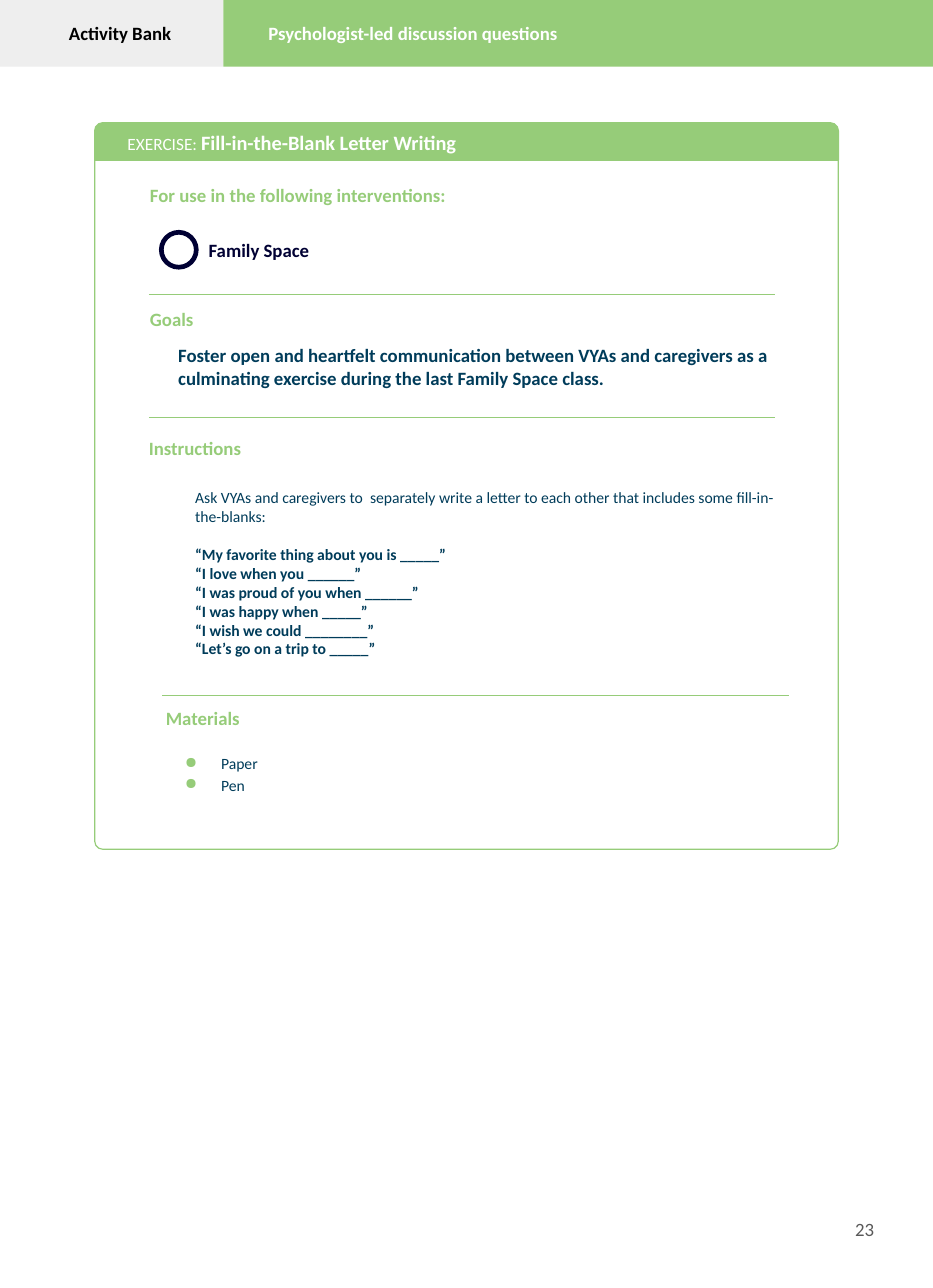
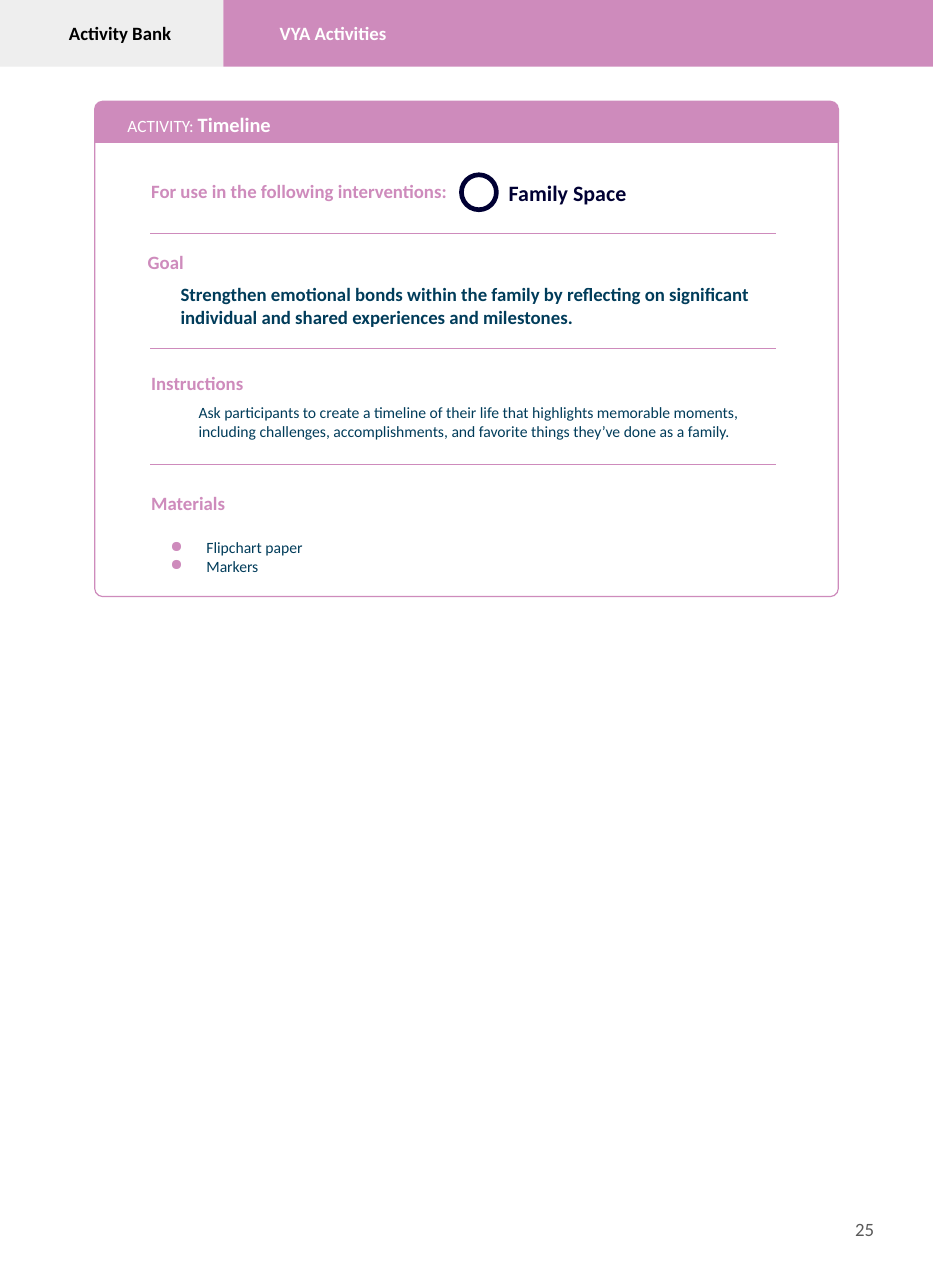
"""Builds two activity bank pages, each with one framed exercise card."""
from dataclasses import dataclass

import lxml.etree
import pptx
import pptx.dml.color
import pptx.enum.shapes
import pptx.enum.text
import pptx.oxml.ns
import pptx.util

Inches = pptx.util.Inches
Pt = pptx.util.Pt
Color = pptx.dml.color.RGBColor
Shape = pptx.enum.shapes.MSO_SHAPE
Align = pptx.enum.text.PP_ALIGN
Anchor = pptx.enum.text.MSO_ANCHOR
qn = pptx.oxml.ns.qn


@dataclass(frozen=True)
class Theme:
    """Font, colours and type sizes of the deck."""
    font: str = "Calibri"
    white: str = "FFFFFF"
    black: str = "000000"
    tab: str = "EEEEEE"
    ink: str = "003C5A"
    navy: str = "000033"
    footer: str = "595959"
    green: str = "96CC79"
    pink: str = "CE8BBC"
    title: float = 13
    kind: float = 11
    heading: float = 12
    body: float = 10


@dataclass(frozen=True)
class Place:
    """A rectangle in inches."""
    left: float
    top: float
    width: float
    height: float


@dataclass(frozen=True)
class Passage:
    """Body text of a section; quotes follow in bold after a gap."""
    left: float
    top: float
    lines: tuple[str, ...]
    quotes: tuple[str, ...] = ()
    strong: bool = False
    bulleted: bool = False
    spacing: float = 1.0


@dataclass(frozen=True)
class Section:
    """A heading with an optional passage below it."""
    heading: str
    left: float
    top: float
    passage: Passage | None = None


@dataclass(frozen=True)
class Activity:
    """Everything that differs from one page to the next."""
    accent: str
    topic: str
    topic_left: float
    kind: str
    name: str
    title_top: float
    band: Place
    card_bottom: float
    ring_left: float
    ring_top: float
    program_size: float
    sections: tuple[Section, ...]
    rules: tuple[tuple[float, float], ...]
    number: str


THEME = Theme()
PAGE_WIDTH, PAGE_HEIGHT = 8.27, 11.42
HEADER_HEIGHT = 0.59
TAB_WIDTH = 1.98
CARD_LEFT, CARD_WIDTH = 0.84, 6.59
CORNER = 0.07
RING = 0.31
RULE_WIDTH = 5.55
PASSAGE_RIGHT = 6.88
USE = "For use in the following interventions:"

ACTIVITIES = (
    Activity(
        accent=THEME.green, topic="Psychologist-led discussion questions", topic_left=2.38,
        kind="EXERCISE: ", name="Fill-in-the-Blank Letter Writing", title_top=1.05,
        band=Place(CARD_LEFT, 1.09, CARD_WIDTH, 0.33), card_bottom=7.53,
        ring_left=1.43, ring_top=2.06, program_size=12,
        sections=(
            Section(USE, 1.33, 1.62),
            Section("Goals", 1.33, 2.72, Passage(1.58, 3.04, (
                "Foster open and heartfelt communication between VYAs and caregivers as a "
                "culminating exercise during the last Family Space class.",), strong=True)),
            Section("Instructions", 1.32, 3.86, Passage(1.73, 4.32, (
                "Ask VYAs and caregivers to  separately write a letter to each other that "
                "includes some fill-in-the-blanks:",), quotes=(
                "“My favorite thing about you is _____”",
                "“I love when you ______”",
                "“I was proud of you when ______”",
                "“I was happy when _____”",
                "“I wish we could ________”",
                "“Let’s go on a trip to _____”"))),
            Section("Materials", 1.47, 6.26, Passage(
                1.46, 6.65, ("Paper", "Pen"), bulleted=True, spacing=1.15)),
        ),
        rules=((1.32, 2.61), (1.32, 3.7), (1.44, 6.17)), number="23"),
    Activity(
        accent=THEME.pink, topic="VYA Activities", topic_left=2.48,
        kind="ACTIVITY: ", name="Timeline", title_top=0.89,
        band=Place(CARD_LEFT, 0.9, CARD_WIDTH, 0.36), card_bottom=5.29,
        ring_left=4.09, ring_top=1.55, program_size=14,
        sections=(
            Section(USE, 1.34, 1.58),
            Section("Goal", 1.31, 2.21, Passage(1.6, 2.5, (
                "Strengthen emotional bonds within the family by reflecting on significant "
                "individual and shared experiences and milestones.",), strong=True)),
            Section("Instructions", 1.34, 3.29, Passage(1.76, 3.56, (
                "Ask participants to create a timeline of their life that highlights memorable "
                "moments, including challenges, accomplishments, and favorite things they’ve "
                "done as a family.",))),
            Section("Materials", 1.34, 4.35, Passage(
                1.33, 4.76, ("Flipchart paper", "Markers"), bulleted=True)),
        ),
        rules=((1.33, 2.07), (1.33, 3.09), (1.33, 4.12)), number="25"),
)


def set_place(box, place: Place) -> None:
    """Move and size a shape."""
    box.left, box.top = Inches(place.left), Inches(place.top)
    box.width, box.height = Inches(place.width), Inches(place.height)


def prepare_frame(box, anchor):
    """Give a shape a wrapping text frame with tight margins."""
    frame = box.text_frame
    frame.auto_size = pptx.enum.text.MSO_AUTO_SIZE.NONE
    frame.word_wrap = True
    frame.vertical_anchor = anchor
    frame.margin_left = frame.margin_right = frame.margin_bottom = 0
    frame.margin_top = Inches(0.01)
    return frame


def add_frame(page, place: Place, anchor=Anchor.TOP):
    """Add a text box and return its frame."""
    box = page.shapes.add_textbox(0, 0, 0, 0)
    set_place(box, place)
    return prepare_frame(box, anchor)


def add_span(para, text: str, *, size: float, color: str, bold: bool = False) -> None:
    """Add a formatted run to a paragraph."""
    span = para.add_run()
    span.text = text
    span.font.name = THEME.font
    span.font.size = Pt(size)
    span.font.bold = bold
    span.font.color.rgb = Color.from_string(color)


def write(frame, text: str, *, size: float, color: str, bold: bool = False,
          align=Align.LEFT, before: float = 0, spacing: float = 1.0, bullet: str = ""):
    """Add a formatted paragraph; bullet is the bullet's colour."""
    para = frame.add_paragraph() if frame.text else frame.paragraphs[0]
    para.alignment = align
    para.space_before = Pt(before)
    para.line_spacing = spacing
    add_span(para, text, size=size, color=color, bold=bold)
    if bullet:
        properties = para._p.get_or_add_pPr()
        properties.set("marL", str(Inches(0.5)))
        properties.set("indent", str(Inches(-0.32)))
        tint = lxml.etree.SubElement(properties, qn("a:buClr"))
        lxml.etree.SubElement(tint, qn("a:srgbClr"), val=bullet)
        lxml.etree.SubElement(properties, qn("a:buChar"), char="●")
    return para


def add_block(page, kind, place: Place, *, fill: str, line: str = "", weight: float = 0.75):
    """Add a flat preset shape."""
    block = page.shapes.add_shape(kind, 0, 0, 0, 0)
    set_place(block, place)
    block.shadow.inherit = False
    block.fill.solid()
    block.fill.fore_color.rgb = Color.from_string(fill)
    if line:
        block.line.color.rgb = Color.from_string(line)
        block.line.width = Pt(weight)
    else:
        block.line.fill.background()
    return block


def add_rule(page, left: float, top: float, color: str) -> None:
    """Add a horizontal dividing line."""
    rule = page.shapes.add_connector(
        pptx.enum.shapes.MSO_CONNECTOR.STRAIGHT,
        Inches(left), Inches(top), Inches(left + RULE_WIDTH), Inches(top))
    rule.line.color.rgb = Color.from_string(color)
    rule.line.width = Pt(0.75)
    lxml.etree.SubElement(rule.element.spPr, qn("a:effectLst"))


def add_header(page, activity: Activity) -> None:
    """Add the grey tab and the coloured topic band."""
    add_block(page, Shape.RECTANGLE, Place(0, 0, TAB_WIDTH, HEADER_HEIGHT), fill=THEME.tab)
    add_block(page, Shape.RECTANGLE,
              Place(TAB_WIDTH, 0, PAGE_WIDTH - TAB_WIDTH, HEADER_HEIGHT), fill=activity.accent)
    write(add_frame(page, Place(0, 0.18, 2.13, 0.3)), "Activity Bank",
          size=THEME.heading, color=THEME.black, bold=True, align=Align.CENTER)
    write(add_frame(page, Place(activity.topic_left, 0.18, 5.1, 0.3)), activity.topic,
          size=THEME.heading, color=THEME.white, bold=True)


def add_card(page, activity: Activity) -> None:
    """Add the card's frame, its band and the title on it."""
    band = activity.band
    body_top = band.top + band.height
    body = Place(band.left, body_top, band.width, activity.card_bottom - body_top)
    frame = add_block(page, Shape.ROUND_2_SAME_RECTANGLE, body,
                      fill=THEME.white, line=activity.accent)
    frame.adjustments[0] = 0
    frame.adjustments[1] = CORNER / min(body.width, body.height)
    cap = add_block(page, Shape.ROUND_2_SAME_RECTANGLE, band,
                    fill=activity.accent, line=activity.accent, weight=1)
    cap.adjustments[0] = CORNER / band.height
    title = page.shapes.title
    set_place(title, Place(1.13, activity.title_top, 4.82, 0.42))
    title.element.getparent().append(title.element)
    para = write(prepare_frame(title, Anchor.MIDDLE), activity.kind,
                 size=THEME.kind, color=THEME.white)
    add_span(para, activity.name, size=THEME.title, color=THEME.white, bold=True)


def add_program(page, activity: Activity) -> None:
    """Add the ring and the program name beside it."""
    left, top = activity.ring_left, activity.ring_top
    add_block(page, Shape.OVAL, Place(left, top, RING, RING),
              fill=THEME.white, line=THEME.navy, weight=3)
    write(add_frame(page, Place(left + RING + 0.11, top, 1.3, RING), Anchor.MIDDLE),
          "Family Space", size=activity.program_size, color=THEME.navy, bold=True)


def add_section(page, section: Section, accent: str) -> None:
    """Add a heading and its passage."""
    write(add_frame(page, Place(section.left, section.top, 2.96, 0.22)), section.heading,
          size=THEME.heading, color=accent, bold=True)
    passage = section.passage
    if passage is None:
        return
    height = 0.45 + 0.17 * len(passage.quotes)
    frame = add_frame(page, Place(
        passage.left, passage.top, PASSAGE_RIGHT - passage.left, height))
    for line in passage.lines:
        write(frame, line, size=THEME.heading if passage.strong else THEME.body,
              color=THEME.ink, bold=passage.strong, spacing=passage.spacing,
              bullet=accent if passage.bulleted else "")
    for index, quote in enumerate(passage.quotes):
        write(frame, quote, size=THEME.body, color=THEME.ink, bold=True,
              before=0 if index else 12.2)


def add_page(deck, activity: Activity) -> None:
    """Build one page."""
    page = deck.slides.add_slide(deck.slide_layouts.get_by_name("Title Only"))
    add_header(page, activity)
    add_card(page, activity)
    for section in activity.sections:
        add_section(page, section, activity.accent)
    add_program(page, activity)
    for left, top in activity.rules:
        add_rule(page, left, top, activity.accent)
    write(add_frame(page, Place(7.25, 10.74, 0.5, 0.3), Anchor.MIDDLE), activity.number,
          size=THEME.heading, color=THEME.footer, align=Align.RIGHT)


def main() -> None:
    """Build and save the deck."""
    deck = pptx.Presentation()
    deck.slide_width, deck.slide_height = Inches(PAGE_WIDTH), Inches(PAGE_HEIGHT)
    for activity in ACTIVITIES:
        add_page(deck, activity)
    deck.save("out.pptx")


if __name__ == "__main__":
    main()
